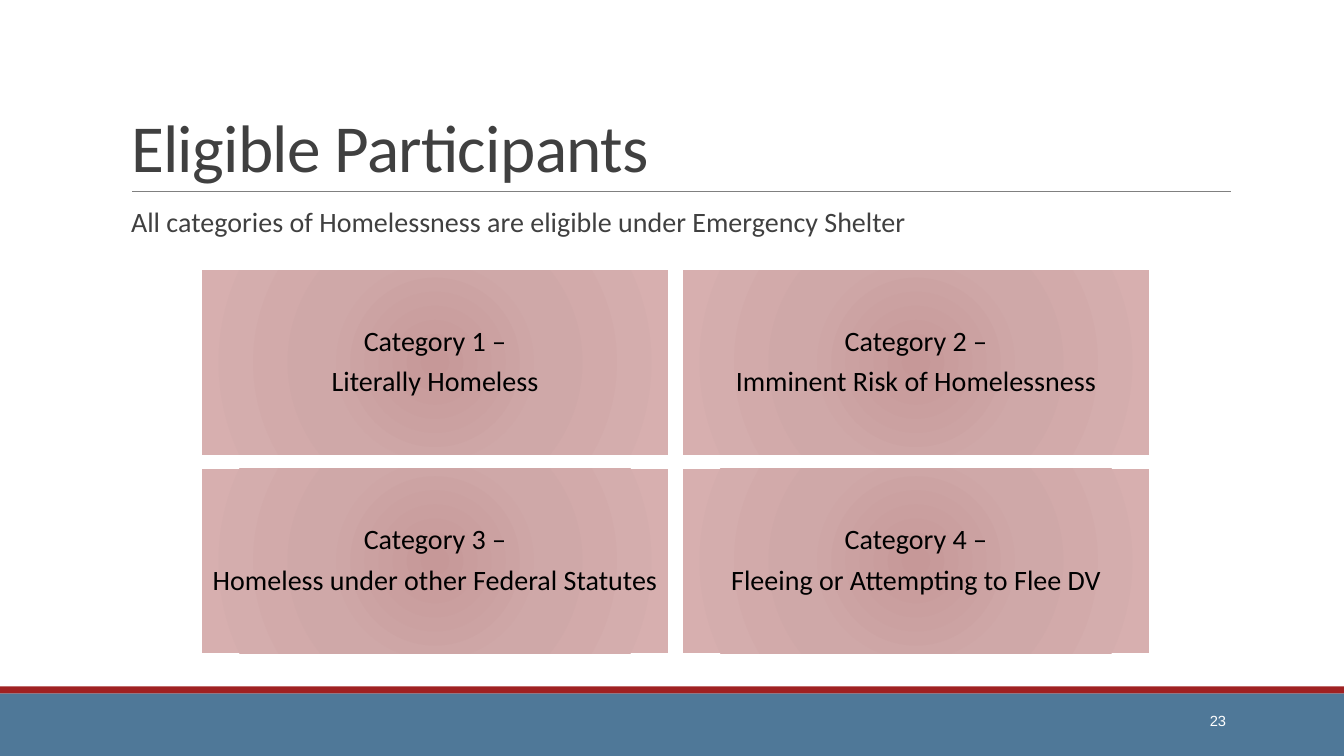
from pptx import Presentation
from pptx.dml.color import RGBColor
from pptx.enum.shapes import MSO_CONNECTOR, MSO_SHAPE
from pptx.enum.text import MSO_ANCHOR, MSO_AUTO_SIZE, PP_ALIGN
from pptx.oxml import parse_xml
from pptx.oxml.ns import nsdecls
from pptx.util import Inches, Pt

RECTANGLE = MSO_SHAPE.RECTANGLE
STRAIGHT = MSO_CONNECTOR.STRAIGHT
TOP, MIDDLE, BOTTOM = MSO_ANCHOR.TOP, MSO_ANCHOR.MIDDLE, MSO_ANCHOR.BOTTOM
LEFT, CENTER, RIGHT = PP_ALIGN.LEFT, PP_ALIGN.CENTER, PP_ALIGN.RIGHT

BLUE = RGBColor(0x4F, 0x78, 0x98)
RED = RGBColor(0x9F, 0x21, 0x22)
GRAY = RGBColor(0x80, 0x80, 0x80)
DARK = RGBColor(0x40, 0x40, 0x40)
BLACK = RGBColor(0, 0, 0)
WHITE = RGBColor(0xFF, 0xFF, 0xFF)
CARD_STOPS = [(0, RGBColor(0xC6, 0x98, 0x98)),
              (45, RGBColor(0xCF, 0xA8, 0xA8)),
              (100, RGBColor(0xD7, 0xAF, 0xAF))]


def write(box, lines, size, color, font="Calibri", align=LEFT, anchor=TOP,
          spacing=1.0, after=0, inset=None):
    frame = box.text_frame
    frame.word_wrap = True
    frame.auto_size = MSO_AUTO_SIZE.NONE
    frame.vertical_anchor = anchor
    if inset:
        frame.margin_left = frame.margin_right = Inches(inset[0])
        frame.margin_top = frame.margin_bottom = Inches(inset[1])
    for index, line in enumerate(lines):
        para = frame.paragraphs[0] if index == 0 else frame.add_paragraph()
        para.alignment = align
        para.line_spacing = spacing
        para.space_before = Pt(0)
        para.space_after = Pt(after)
        span = para.add_run()
        span.text = line
        span.font.name = font
        span.font.size = Pt(size)
        span.font.color.rgb = color
    return frame.paragraphs[0]


def place(box, left, top, width, height):
    box.left, box.top = Inches(left), Inches(top)
    box.width, box.height = Inches(width), Inches(height)


deck = Presentation()
deck.slide_width, deck.slide_height = Inches(13.33), Inches(7.5)
page = deck.slides.add_slide(deck.slide_layouts[1])
title, body = page.placeholders

# Footer bands
for top, height, color in [(6.88, 0.62, BLUE), (6.81, 0.07, RED)]:
    band = page.shapes.add_shape(RECTANGLE, 0, Inches(top),
                                 deck.slide_width, Inches(height))
    band.shadow.inherit = False
    band.fill.solid()
    band.fill.fore_color.rgb = color
    band.line.fill.background()

# Page number
number = page.shapes.add_textbox(Inches(10.83), Inches(6.95), Inches(1.43), Inches(0.4))
write(number, ["23"], 10.5, WHITE, font="Arial", align=RIGHT, anchor=MIDDLE)

# Title and the rule below it
place(title, 1.2, 0.31, 11, 1.59)
heading = write(title, ["Eligible Participants"], 48, DARK, anchor=BOTTOM,
                spacing=0.85, inset=(0.1, 0.05))
heading.runs[0].font._element.set("spc", "-50")

rule = page.shapes.add_connector(STRAIGHT, Inches(1.31), Inches(1.9),
                                 Inches(12.21), Inches(1.9))
rule.line.color.rgb = GRAY
rule.line.width = Pt(0.5)
rule._element.spPr.append(parse_xml(f"<a:effectLst {nsdecls('a')}/>"))

# Introductory sentence with a blank bullet
place(body, 1.2, 2.02, 11, 4.4)
intro = write(body, ["All categories of Homelessness are eligible under Emergency Shelter"],
              20, DARK, spacing=0.9, after=2, inset=(0, 0.05))
properties = intro._element.get_or_add_pPr()
properties.set("marL", str(Inches(0.1)))
properties.set("indent", str(-Inches(0.1)))
properties.append(parse_xml(f'<a:buClr {nsdecls("a")}><a:srgbClr val="{RED}"/></a:buClr>'))
properties.append(parse_xml(f'<a:buChar {nsdecls("a")} char=" "/>'))

# Category cards in a two by two grid
CARD_WIDTH, CARD_HEIGHT, GAP = 4.63, 1.83, 0.14
categories = ["Literally Homeless", "Imminent Risk of Homelessness",
              "Homeless under other Federal Statutes", "Fleeing or Attempting to Flee DV"]
stops = "".join(f'<a:gs pos="{position * 1000}"><a:srgbClr val="{color}"/></a:gs>'
                for position, color in CARD_STOPS)
gradient = (f'<a:gradFill {nsdecls("a")} rotWithShape="1"><a:gsLst>{stops}</a:gsLst>'
            '<a:path path="circle"><a:fillToRect l="100000" t="100000" '
            'r="100000" b="100000"/></a:path></a:gradFill>')
for index, category in enumerate(categories):
    row, column = divmod(index, 2)
    card = page.shapes.add_shape(
        RECTANGLE, Inches(2 + column * (CARD_WIDTH + GAP)),
        Inches(2.68 + row * (CARD_HEIGHT + GAP)), Inches(CARD_WIDTH), Inches(CARD_HEIGHT))
    card.shadow.inherit = False
    card.line.fill.background()
    card._element.spPr.prstGeom.addnext(parse_xml(gradient))
    write(card, [f"Category {index + 1} –", category], 20, BLACK, align=CENTER,
          anchor=MIDDLE, spacing=0.9, after=7, inset=(0.08, 0.08))

deck.save("out.pptx")
